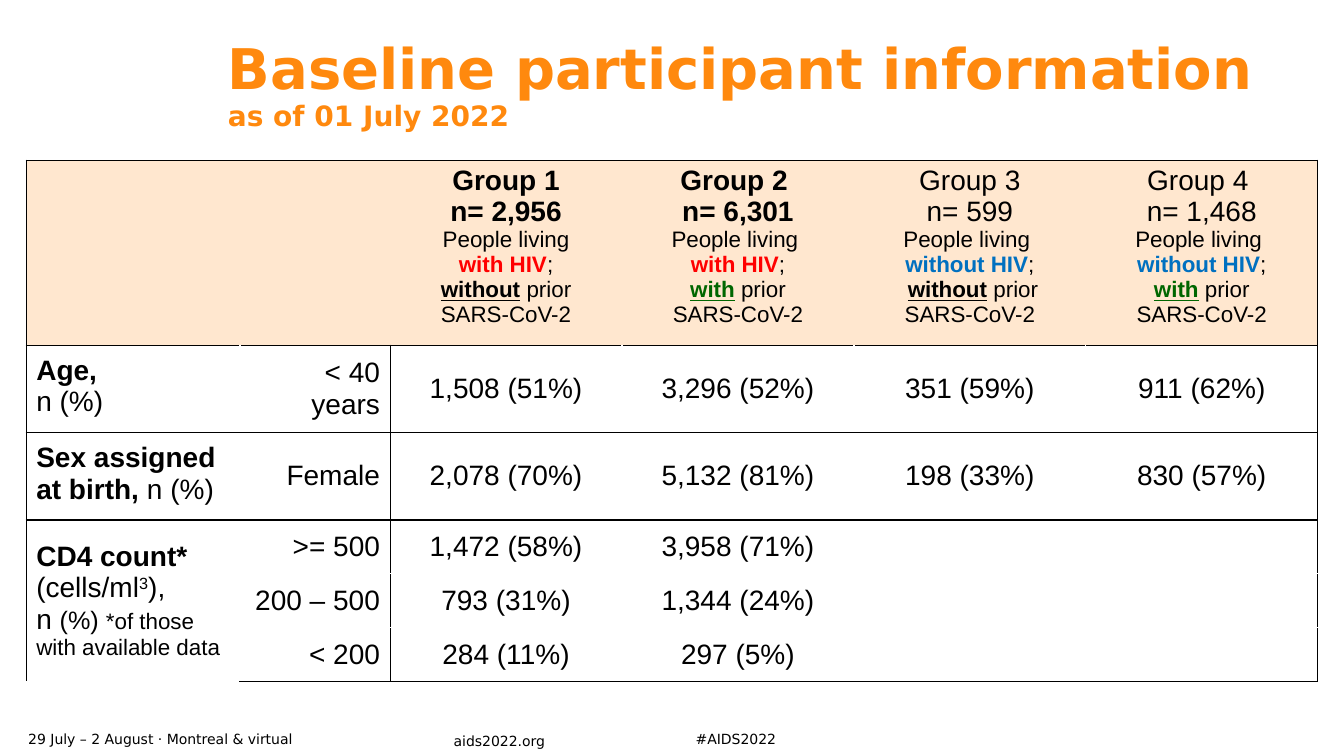
"""Build the slide on baseline participant information."""
import pptx
import pptx.util
import pptx.dml.color
import pptx.enum.text
import lxml.etree

Inches, Pt = pptx.util.Inches, pptx.util.Pt
RGB = pptx.dml.color.RGBColor
ALIGN, ANCHOR = pptx.enum.text.PP_ALIGN, pptx.enum.text.MSO_ANCHOR
BLACK, WHITE = RGB(0, 0, 0), RGB(255, 255, 255)
ORANGE, PEACH = RGB(0xFF, 0x89, 0x0E), RGB(0xFF, 0xE7, 0xCF)
RED, BLUE, GREEN = RGB(0xFF, 0, 0), RGB(0, 0x70, 0xC0), RGB(0, 0x66, 0)

BOLD = {"bold": True}
UNDER = {"bold": True, "underline": True}
HIV = ("with HIV", {"bold": True, "color": RED})
NO_HIV = ("without HIV", {"bold": True, "color": BLUE})
PRIOR = ("with", {**UNDER, "color": GREEN})
NONE = ("without", UNDER)

TITLE = [("Baseline participant information\n", {}),
         ("as of 01 July 2022", {"size": 20})]
FOOTER = [("29 July – 2 August · Montreal & virtual", 0.28, 7.21, 4.02),
          ("aids2022.org", 4.5, 7.23, 1.93),
          ("#AIDS2022", 6.9, 7.21, 1.93)]
GROUPS = [
    ("Group 1", "n= 2,956", "People living", HIV, [NONE], BOLD),
    ("Group 2 ", "n= 6,301", "People living ", HIV, [PRIOR], BOLD),
    ("Group 3", "n= 599", "People living ", NO_HIV, [(" ", BOLD), NONE], {}),
    ("Group 4 ", "n= 1,468", "People living ", NO_HIV, [PRIOR], {}),
]
LABELS = {
    1: [[("Age,", BOLD)], [("n (%)", {})]],
    2: [[("Sex assigned at birth, ", BOLD), ("n (%)", {})]],
    3: [[("CD4 count*  ", BOLD), ("(cells/ml", {}), ("3", {"base": 30}),
         ("),", {})],
        [("n ", {}), ("(%) ", {"size": 18}),
         ("*of those with available data", {"size": 16})]],
}
ROWS = [
    ("< 40 years", "1,508 (51%)", "3,296 (52%)", "351 (59%)", "911 (62%)"),
    ("Female", "2,078 (70%)", "5,132 (81%)", "198 (33%)", "830 (57%)"),
    (">= 500", "1,472 (58%)", "3,958 (71%)", "", ""),
    ("200 – 500", "793 (31%)", "1,344 (24%)", "", ""),
    ("< 200", "284 (11%)", "297 (5%)", "", ""),
]
WIDTHS = [2.12, 1.49] + [2.3] * 4
HEIGHTS = [1.71] + [0.82] * 2 + [0.51] * 3
LAST_ROW, LAST_COL = len(HEIGHTS) - 1, len(WIDTHS) - 1
CD4 = 3


def style(font, size=None, bold=None, underline=None, color=None, name=None):
    """Set the given traits of a font."""
    if size:
        font.size = Pt(size)
    if bold is not None:
        font.bold = bold
    if underline:
        font.underline = True
    if color is not None:
        font.color.rgb = color
    if name:
        font.name = name


def write(frame, paras, align, **look):
    """Fill a text frame; each paragraph is a list of (text, traits)."""
    for i, runs in enumerate(paras):
        para = frame.paragraphs[0] if i == 0 else frame.add_paragraph()
        para.alignment = align
        style(para.font, **look)
        for text, traits in runs:
            traits = dict(traits)
            base = traits.pop("base", None)
            for j, line in enumerate(text.split("\n")):
                if j:
                    para.add_line_break()
                if line:
                    run = para.add_run()
                    run.text = line
                    style(run.font, **traits)
                    if base:
                        run.font._element.set("baseline", str(base * 1000))


def bare(frame):
    """Wrap the text and drop the margins."""
    frame.word_wrap = True
    frame.margin_left = frame.margin_right = 0
    frame.margin_top = frame.margin_bottom = 0


def border(cell, sides):
    """Draw the sides of a cell; None leaves a side without a line."""
    props = cell._tc.get_or_add_tcPr()
    space = "{http://schemas.openxmlformats.org/drawingml/2006/main}"
    for i, (side, color) in enumerate(sides.items()):
        line = lxml.etree.Element(space + "ln" + side, w=str(Pt(1)))
        if color is None:
            lxml.etree.SubElement(line, space + "noFill")
        else:
            fill = lxml.etree.SubElement(line, space + "solidFill")
            lxml.etree.SubElement(fill, space + "srgbClr", val=str(color))
        props.insert(i, line)


def upright(row, edge):
    """Colour of the vertical line at a column edge."""
    if edge in (0, LAST_COL + 1) or (row and edge == 2):
        return BLACK
    return WHITE if row else None


def level(edge, col):
    """Colour of the horizontal line at a row edge."""
    return WHITE if CD4 < edge <= LAST_ROW else BLACK


def fill_cell(cell, row, col):
    """Write one table cell."""
    cell.fill.solid()
    cell.fill.fore_color.rgb = WHITE if row else PEACH
    border(cell, {"L": upright(row, col), "R": upright(row, col + 1),
                  "T": level(row, col), "B": level(row + 1, col)})
    look = {"size": 20, "color": BLACK, "name": "Arial"}
    if row == 0:
        if col > 1:
            group, count, people, hiv, prior, weight = GROUPS[col - 2]
            frame = cell.text_frame
            write(frame, [[(group, weight)], [(count, weight)],
                          [(people, {"size": 16})],
                          [(hiv[0], {**hiv[1], "size": 16}),
                           (";", {"size": 16})],
                          [(t, {**s, "size": 16}) for t, s in prior]
                          + [(" prior\nSARS-CoV-2", {"size": 16})]],
                  ALIGN.CENTER, **look)
            for para in frame.paragraphs[2:]:
                para.font.size = Pt(16)
        return
    cell.margin_top = cell.margin_bottom = Inches(0.1)
    cell.vertical_anchor = ANCHOR.MIDDLE
    if col == 0:
        if row < CD4:
            cell.vertical_anchor = ANCHOR.TOP
        write(cell.text_frame, LABELS.get(row, []), ALIGN.LEFT, **look)
    else:
        align = ALIGN.RIGHT if col == 1 else ALIGN.CENTER
        write(cell.text_frame, [[(ROWS[row - 1][col - 1], {})]], align, **look)


def main():
    """Lay out the slide and save it."""
    deck = pptx.Presentation()
    deck.slide_width, deck.slide_height = Inches(13.33), Inches(7.5)
    slide = deck.slides.add_slide(deck.slide_layouts[5])

    title = slide.shapes.title
    title.left, title.top = Inches(2.26), Inches(0.41)
    title.width, title.height = Inches(10.49), Inches(1.05)
    bare(title.text_frame)
    title.text_frame.auto_size = pptx.enum.text.MSO_AUTO_SIZE.NONE
    title.text_frame.vertical_anchor = ANCHOR.TOP
    write(title.text_frame, [TITLE], ALIGN.LEFT, size=40, bold=True,
          color=ORANGE, name="DejaVu Sans")
    title.text_frame.paragraphs[0].line_spacing = 0.9

    for text, left, top, width in FOOTER:
        box = slide.shapes.add_textbox(Inches(left), Inches(top),
                                       Inches(width), Inches(0.24))
        bare(box.text_frame)
        box.text_frame.vertical_anchor = ANCHOR.MIDDLE
        write(box.text_frame, [[(text, {})]], ALIGN.LEFT, size=10,
              color=BLACK, name="DejaVu Sans")

    table = slide.shapes.add_table(
        len(HEIGHTS), len(WIDTHS), Inches(0.26), Inches(1.59),
        Inches(sum(WIDTHS)), Inches(sum(HEIGHTS))).table
    table.first_row = table.horz_banding = False
    for col, width in enumerate(WIDTHS):
        table.columns[col].width = Inches(width)
    for row, height in enumerate(HEIGHTS):
        table.rows[row].height = Inches(height)
        for col in range(len(WIDTHS)):
            fill_cell(table.cell(row, col), row, col)
    table.cell(CD4, 0).merge(table.cell(LAST_ROW, 0))
    deck.save("out.pptx")


if __name__ == "__main__":
    main()
